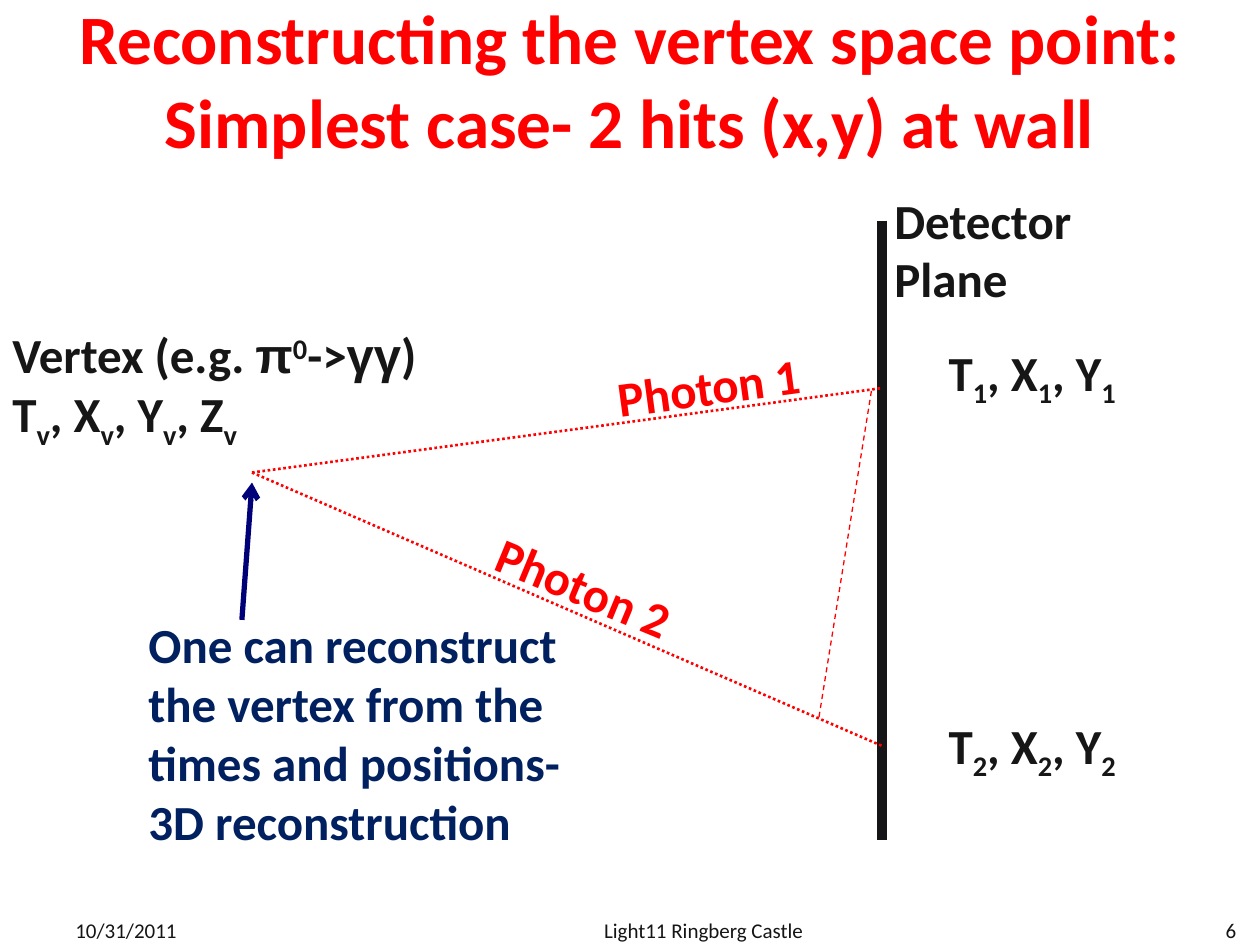
from lxml import etree
from pptx import Presentation
from pptx.dml.color import RGBColor
from pptx.enum import dml, text
from pptx.oxml import ns
from pptx.util import Inches, Pt

THEME = {
    "font": "Calibri", "greek": "Arial",
    "title": 39.6, "body": 28, "footer": 12,
    "red": "FF0000", "ink": "161616", "wall": "151517",
    "note": "002060", "arrow": "000079",
}
BASELINES = {"sub": "-25000", "super": "30000"}
ALIGN, ANCHOR, DASH = text.PP_ALIGN, text.MSO_ANCHOR, dml.MSO_LINE


def indexed(names, index):
    """Spans such as T1, X1, Y1 with the index set as a subscript."""
    spans = []
    for position, name in enumerate(names):
        spans += [(", " + name if position else name, ""), (index, "sub")]
    return spans


TITLE = "Reconstructing the vertex space point: Simplest case- 2 hits (x,y) at wall"
DECAY = [("Vertex (e.g. ", ""), ("π", "greek"), ("0", "super"), ("->", ""),
         ("γγ", "greek"), (")", "")]

# left, top, width, height, rotation, colour, paragraphs of (text, style) spans
LABELS = [
    (7.43, 2.67, 2.42, 0.57, 0, "ink", [indexed("TXY", "1")]),
    (7.43, 5.63, 2.42, 0.57, 0, "ink", [indexed("TXY", "2")]),
    (0, 2.53, 3.83, 1.04, 0, "ink", [DECAY, indexed("TXYZ", "v")]),
    (4.8, 2.78, 1.67, 0.57, 352.3, "red", [[("Photon 1", "")]]),
    (3.72, 4.36, 1.67, 1.04, 22.5, "red", [[("Photon 2", "")]]),
    (7, 1.46, 2.42, 1.04, 0, "ink", [[("Detector Plane", "")]]),
    (1.08, 4.83, 3.69, 1.99, 0, "note",
     [[("One can reconstruct the vertex from the times and positions- "
        "3D reconstruction", "")]]),
]

# left, width, alignment, wording
FOOTERS = [
    (0.5, 2.33, ALIGN.LEFT, "10/31/2011"),
    (4, 3.17, ALIGN.CENTER, "Light11 Ringberg Castle"),
    (7.58, 2.33, ALIGN.RIGHT, "6"),
]

VERTEX, HIT_1, HIT_2 = (2, 3.75), (7, 3.08), (7, 5.92)
# start, end, colour, width, dash, arrowhead at the end
LINES = [
    ((7, 1.75), (7, 6.67), "wall", 6, None, False),
    (VERTEX, HIT_1, "red", 1.5, DASH.ROUND_DOT, False),
    (VERTEX, HIT_2, "red", 1.5, DASH.ROUND_DOT, False),
    ((6.5, 5.69), (6.92, 3.08), "red", 0.75, DASH.DASH, False),
    ((1.92, 4.92), (2, 3.83), "arrow", 3, None, True),
]


def apply(target, **values):
    for name, value in values.items():
        setattr(target, name, value)


def place(shape, *lengths):
    apply(shape, **dict(zip(("left", "top", "width", "height"), map(Inches, lengths))))


def add_span(para, wording, size, colour, bold=True, style=""):
    span = para.add_run()
    span.text = wording
    face = THEME["greek" if style == "greek" else "font"]
    apply(span.font, name=face, size=Pt(THEME[size]), bold=bold)
    span.font.color.rgb = RGBColor.from_string(THEME[colour])
    if style in BASELINES:
        span.font._element.set("baseline", BASELINES[style])


def add_box(page, *lengths):
    box = page.shapes.add_textbox(*map(Inches, lengths))
    box.text_frame.word_wrap = True
    return box


def add_label(page, left, top, width, height, rotation, colour, paragraphs):
    box = add_box(page, left, top, width, height)
    box.rotation = rotation
    frame = box.text_frame
    frame.auto_size = text.MSO_AUTO_SIZE.SHAPE_TO_FIT_TEXT
    for position, spans in enumerate(paragraphs):
        para = frame.add_paragraph() if position else frame.paragraphs[0]
        for wording, style in spans:
            add_span(para, wording, "body", colour, style=style)


def add_footer(page, left, width, alignment, wording):
    frame = add_box(page, left, 7.18, width, 0.4).text_frame
    frame.vertical_anchor = ANCHOR.MIDDLE
    para = frame.paragraphs[0]
    para.alignment = alignment
    add_span(para, wording, "footer", "wall", bold=False)


def add_line(page, start, end, colour, width, dash, arrowhead):
    line = page.shapes.add_connector(1, *map(Inches, start + end))
    line.line.color.rgb = RGBColor.from_string(THEME[colour])
    apply(line.line, width=Pt(width), dash_style=dash)
    if arrowhead:
        etree.SubElement(line.line._get_or_add_ln(), ns.qn("a:tailEnd"), type="arrow")
    etree.SubElement(line._element.spPr, ns.qn("a:effectLst"))


def add_title(page):
    title = page.shapes.title
    place(title, 0.25, 0, 9.5, 1.25)
    apply(title.text_frame, word_wrap=True, vertical_anchor=ANCHOR.MIDDLE,
          auto_size=text.MSO_AUTO_SIZE.NONE)
    para = title.text_frame.paragraphs[0]
    para.alignment = ALIGN.CENTER
    add_span(para, TITLE, "title", "red")


def main():
    deck = Presentation()
    apply(deck, slide_width=Inches(10), slide_height=Inches(7.5))
    page = deck.slides.add_slide(deck.slide_layouts[5])
    add_title(page)
    for add, rows in ((add_footer, FOOTERS), (add_line, LINES), (add_label, LABELS)):
        for row in rows:
            add(page, *row)
    deck.save("out.pptx")


if __name__ == "__main__":
    main()
